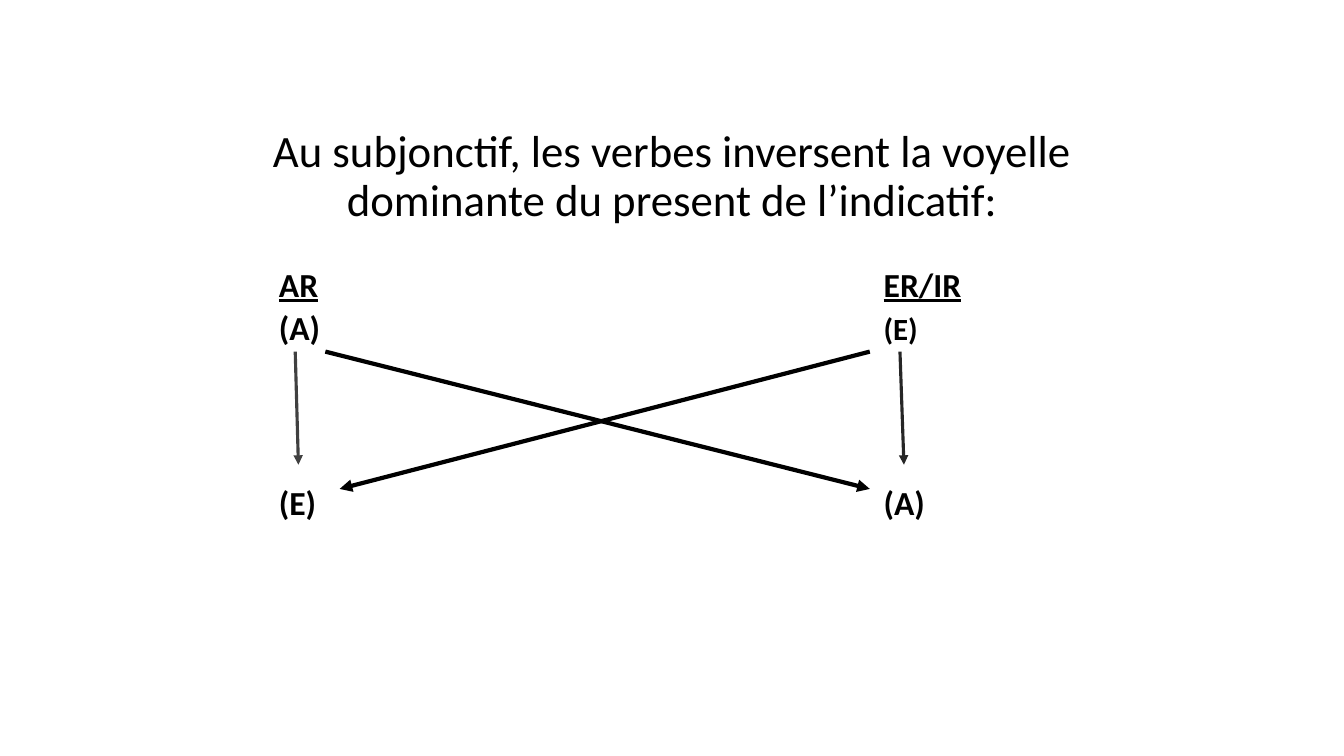
import pptx
import pptx.dml.color
import pptx.enum.shapes
import pptx.enum.text
import pptx.oxml.ns
import pptx.util
from lxml import etree

Cm = pptx.util.Cm
Pt = pptx.util.Pt
qn = pptx.oxml.ns.qn
ALIGN = pptx.enum.text.PP_ALIGN
ANCHOR = pptx.enum.text.MSO_ANCHOR

TEXT_LEFT, TEXT_WIDTH = 4.24, 25.4
COLUMN_GAP = 15.24
VOWEL_Y, CROSS_END_Y, DOWN_END_Y = 8.86, 12.32, 11.71


def color(value):
    return pptx.dml.color.RGBColor.from_string(value)


def write(para, text, size=24, bold=False, underline=False, ink="000000", font="Calibri"):
    span = para.add_run()
    span.text = text
    span.font.name = font
    span.font.size = Pt(size)
    span.font.bold = bold
    span.font.underline = underline
    span.font.color.rgb = color(ink)


class GrammarSlide:
    """Holds the shared text style and the slide being filled."""

    line_spacing = 0.9
    space_before = 5

    def __init__(self, deck):
        self.slide = deck.slides.add_slide(deck.slide_layouts[5])

    def title(self, text, left, top, width, height):
        box = self.slide.shapes.title
        box.left, box.top, box.width, box.height = map(Cm, (left, top, width, height))
        frame = box.text_frame
        frame.word_wrap = True
        frame.auto_size = pptx.enum.text.MSO_AUTO_SIZE.NONE
        frame.vertical_anchor = ANCHOR.BOTTOM
        para = frame.paragraphs[0]
        para.alignment = ALIGN.CENTER
        para.line_spacing = self.line_spacing
        write(para, text, size=32)

    def columns(self, rows, left, top, width, height):
        """Write rows of (left text, right text, format, right format, extra space above)."""
        box = self.slide.shapes.add_textbox(*map(Cm, (left, top, width, height)))
        frame = box.text_frame
        frame.word_wrap = True
        frame.margin_left = Cm(2.79)
        for index, (first, second, style, second_style, extra) in enumerate(rows):
            para = frame.add_paragraph() if index else frame.paragraphs[0]
            para.alignment = ALIGN.LEFT
            para.line_spacing = self.line_spacing
            para.space_before = Pt(self.space_before + extra)
            self.tab_stop(para)
            write(para, first, bold=True, **style)
            write(para, "\t", bold=True)
            write(para, second, bold=True, **{**style, **second_style})

    def tab_stop(self, para):
        stops = etree.SubElement(para._p.get_or_add_pPr(), qn("a:tabLst"))
        etree.SubElement(stops, qn("a:tab"), pos=str(Cm(COLUMN_GAP)), algn="l")

    def arrow(self, start, end, ink, weight):
        line = self.slide.shapes.add_connector(
            pptx.enum.shapes.MSO_CONNECTOR.STRAIGHT, *map(Cm, (*start, *end)))
        line.line.color.rgb = color(ink)
        line.line.width = Pt(weight)
        etree.SubElement(line.line._get_or_add_ln(), qn("a:tailEnd"), type="triangle")
        etree.SubElement(line._element.spPr, qn("a:effectLst"))


def main():
    deck = pptx.Presentation()
    deck.slide_width, deck.slide_height = Cm(33.87), Cm(19.05)
    page = GrammarSlide(deck)

    page.title("Au subjonctif, les verbes inversent la voyelle dominante du present de l’indicatif:",
               TEXT_LEFT, 2.39, TEXT_WIDTH, 3.43)
    page.columns([
        ("AR", "ER/IR", {"underline": True}, {}, 0),
        ("(A)", "(E)", {}, {"size": 22}, 0),
        ("(E)", "(A)", {}, {}, 94),
    ], TEXT_LEFT, 6.63, TEXT_WIDTH, 7.98)

    for start_x, end_x, end_y, ink, weight in [
        (8.2, 21.92, CROSS_END_Y, "000000", 3),
        (21.92, 8.56, CROSS_END_Y, "000000", 3),
        (7.44, 7.52, DOWN_END_Y, "404040", 2.25),
        (22.68, 22.78, DOWN_END_Y, "262626", 2.25),
    ]:
        page.arrow((start_x, VOWEL_Y), (end_x, end_y), ink, weight)

    deck.save("out.pptx")


if __name__ == "__main__":
    main()
